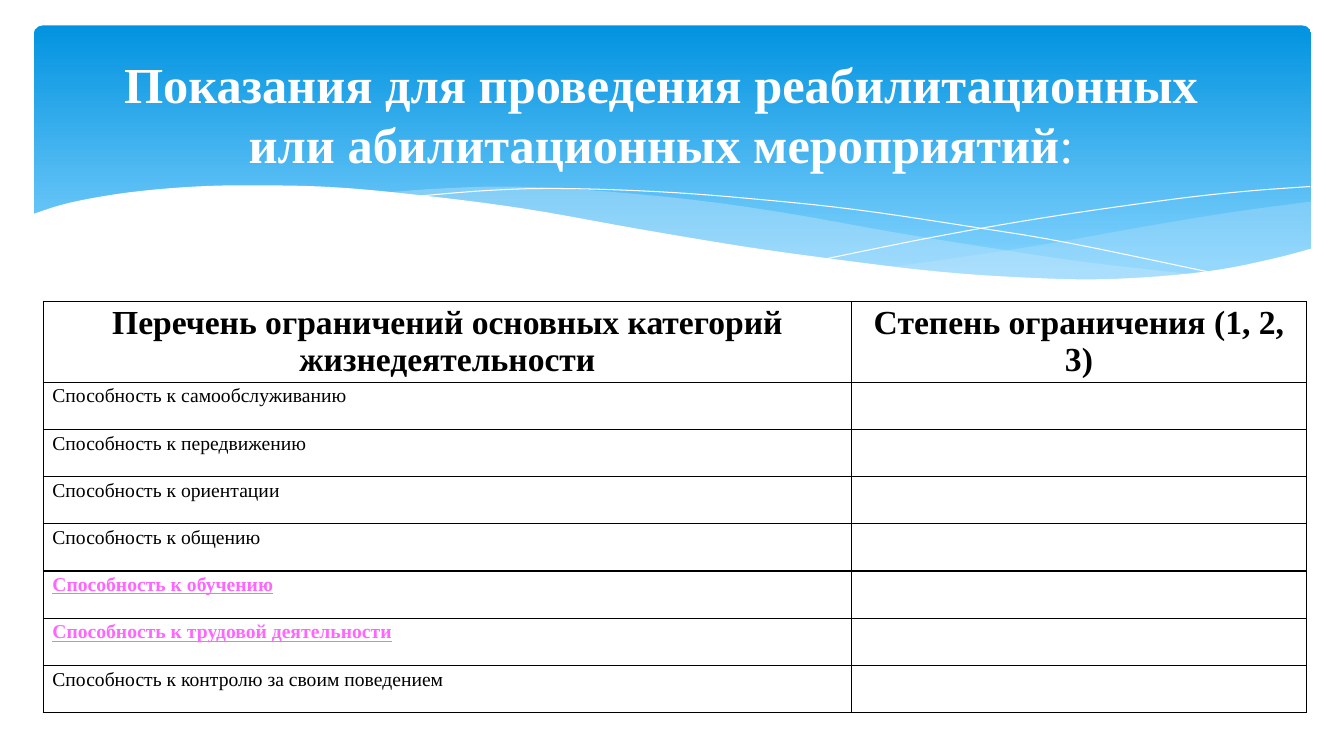
"""Build a slide with a wavy blue header and a table of activity limitations."""
import lxml.etree
import pptx
import pptx.dml.color
import pptx.enum.shapes
import pptx.enum.text
import pptx.oxml
import pptx.oxml.ns
import pptx.util

Cm = pptx.util.Cm
Pt = pptx.util.Pt
ALIGN = pptx.enum.text.PP_ALIGN
FONT = "Times New Roman"
COLOURS = {"white": "FFFFFF", "black": "000000", "pink": "FF66FF",
           "deep": "0293E0", "light": "83D3FE", "mist": "C6E7FC"}

FRONT_TOP = [(0.79, 5.41), (1.75, 5.11), (3.23, 4.85), (4.93, 4.7), (6.55, 4.67),
             (8.46, 4.72), (10.69, 4.93), (13.23, 5.26), (16.1, 5.77), (18.8, 6.22),
             (21.18, 6.55), (23.32, 6.81), (25.2, 6.96), (27.38, 7.04),
             (29.24, 6.96), (30.81, 6.78), (32.16, 6.5), (33.1, 6.25)]
RIGHT_TOP = [(33.05, 5.08), (31.17, 5.33), (29.13, 5.66), (26.37, 6.15),
             (23.9, 6.53), (22.4, 6.73)]
RIGHT_BOTTOM = [(22.4, 6.73), (24.33, 6.91), (26.04, 7.04), (27.56, 7.06),
                (29.24, 6.99), (31.19, 6.73), (33.05, 6.27)]
MIDDLE_TOP = [(9.7, 4.85), (11.1, 4.75), (12.85, 4.7), (14.96, 4.8), (17.42, 5.03),
              (19.76, 5.36), (22.63, 5.87), (25.12, 6.27), (27.33, 6.6), (30.23, 6.93)]
MIDDLE_BOTTOM = [(30.23, 6.93), (28.4, 7.06), (26.57, 7.06), (24.46, 6.96),
                 (22.02, 6.71), (19.18, 6.3), (15.21, 5.64), (12.98, 5.26),
                 (11.58, 5.05), (9.7, 4.85)]
FALLING_LINE = [(10.46, 4.95), (12.29, 4.8), (14.1, 4.75), (16.56, 4.83), (18.85, 5),
                (21.54, 5.28), (24.64, 5.74), (26.92, 6.12), (30.73, 6.91)]
RISING_LINE = [(20.78, 6.53), (23.55, 5.97), (26.29, 5.49), (29.34, 5.05),
               (31.29, 4.83), (33.02, 4.7)]

HEADERS = ["Перечень ограничений основных категорий жизнедеятельности",
           "Степень ограничения (1, 2, 3)"]
ABILITIES = ["самообслуживанию", "передвижению", "ориентации", "общению", "обучению",
             "трудовой деятельности", "контролю за своим поведением"]
HIGHLIGHTED = {"обучению", "трудовой деятельности"}


def colour(name):
    """Return the named colour."""
    return pptx.dml.color.RGBColor.from_string(COLOURS[name])


def smooth_curve(knots, steps=5):
    """Return points of a Catmull-Rom curve through the knots."""
    padded = [knots[0], *knots, knots[-1]]
    points = []
    for a, b, c, d in zip(padded, padded[1:], padded[2:], padded[3:]):
        for step in range(steps):
            t = step / steps
            points.append(tuple(
                0.5 * (2 * q + (r - p) * t + (2 * p - 5 * q + 4 * r - s) * t ** 2
                       + (3 * q - p - 3 * r + s) * t ** 3)
                for p, q, r, s in zip(a, b, c, d)))
    return points + [knots[-1]]


def add_outline(page, points, fill=None, opacity=100):
    """Draw a filled closed outline, or a thin white open line without fill."""
    start, *rest = [(Cm(x), Cm(y)) for x, y in points]
    builder = page.shapes.build_freeform(*start)
    builder.add_line_segments(rest, close=fill is not None)
    shape = builder.convert_to_shape()
    shape.shadow.inherit = False
    if fill is None:
        shape.fill.background()
        shape.line.color.rgb = colour("white")
        shape.line.width = Pt(0)
        return
    shape.line.fill.background()
    shape.fill.solid()
    shape.fill.fore_color.rgb = colour(fill)
    if opacity < 100:
        value = shape.fill._xPr.find(".//" + pptx.oxml.ns.qn("a:srgbClr"))
        lxml.etree.SubElement(value, pptx.oxml.ns.qn("a:alpha"), val=str(opacity * 1000))


def add_header_panel(page):
    """Draw the rounded gradient panel behind the title."""
    panel = page.shapes.add_shape(pptx.enum.shapes.MSO_SHAPE.ROUNDED_RECTANGLE,
                                  Cm(0.85), Cm(0.64), Cm(32.2), Cm(6.85))
    panel.adjustments[0] = 0.034
    panel.shadow.inherit = False
    panel.line.fill.background()
    panel.fill.gradient()
    panel.fill.gradient_angle = 270
    for stop, name, position in zip(panel.fill.gradient_stops, ("deep", "light"), (0, 0.9)):
        stop.color.rgb = colour(name)
        stop.position = position


def add_span(para, text, size, name="black", bold=False, underline=False):
    """Append formatted text to a paragraph."""
    span = para.add_run()
    span.text = text
    span.font.name = FONT
    span.font.size = Pt(size)
    span.font.bold = bold
    span.font.underline = underline
    span.font.color.rgb = colour(name)


def place_title(page):
    """Position the title in front of the waves and fill it."""
    box = page.shapes.title
    page.shapes._spTree.append(box._element)
    box.left, box.top, box.width, box.height = Cm(2.06), Cm(1.02), Cm(29.2), Cm(3.68)
    box.text_frame.word_wrap = True
    box.text_frame.vertical_anchor = pptx.enum.text.MSO_ANCHOR.MIDDLE
    para = box.text_frame.paragraphs[0]
    para.alignment = ALIGN.CENTER
    add_span(para, "Показания для проведения реабилитационных или абилитационных мероприятий",
             36, "white", bold=True)
    add_span(para, ":", 36, "white")


def format_cell(cell):
    """Give a cell white fill, tight margins and black borders."""
    cell.margin_left = cell.margin_right = Cm(0.23)
    cell.margin_top = cell.margin_bottom = Cm(0.08)
    properties = cell._tc.get_or_add_tcPr()
    for side in ("lnL", "lnR", "lnT", "lnB"):
        properties.append(pptx.oxml.parse_xml(
            f'<a:{side} {pptx.oxml.ns.nsdecls("a")} w="{Pt(1)}"><a:solidFill>'
            f'<a:srgbClr val="{COLOURS["black"]}"/></a:solidFill></a:{side}>'))
    cell.fill.solid()
    cell.fill.fore_color.rgb = colour("white")


def add_limitations_table(page):
    """Add the table of limitations with empty degree cells."""
    table = page.shapes.add_table(len(ABILITIES) + 1, len(HEADERS), Cm(1.09), Cm(7.59),
                                  Cm(31.83), Cm(10.37)).table
    table.first_row = table.horz_banding = False
    for column, width in zip(table.columns, (20.37, 11.46)):
        column.width = Cm(width)
    for index, row in enumerate(table.rows):
        row.height = Cm(1.19 if index else 2.04)
    for cell in table.iter_cells():
        format_cell(cell)
    for column, text in enumerate(HEADERS):
        para = table.cell(0, column).text_frame.paragraphs[0]
        para.alignment = ALIGN.CENTER
        add_span(para, text, 24, bold=True)
    for row, ability in enumerate(ABILITIES, 1):
        marked = ability in HIGHLIGHTED
        add_span(table.cell(row, 0).text_frame.paragraphs[0], f"Способность к {ability}", 14,
                 "pink" if marked else "black", bold=marked, underline=marked)


def main():
    """Build and save the slide."""
    deck = pptx.Presentation()
    deck.slide_width, deck.slide_height = Cm(33.87), Cm(19.05)
    page = deck.slides.add_slide(deck.slide_layouts[5])
    add_header_panel(page)
    add_outline(page, smooth_curve(RIGHT_TOP) + smooth_curve(RIGHT_BOTTOM), "mist", 29)
    add_outline(page, smooth_curve(MIDDLE_TOP) + smooth_curve(MIDDLE_BOTTOM), "mist", 40)
    add_outline(page, smooth_curve(FALLING_LINE))
    add_outline(page, smooth_curve(RISING_LINE))
    add_outline(page, smooth_curve(FRONT_TOP) + [(33.1, 8.36), (0.79, 8.36)], "white")
    add_limitations_table(page)
    place_title(page)
    deck.save("out.pptx")


if __name__ == "__main__":
    main()
